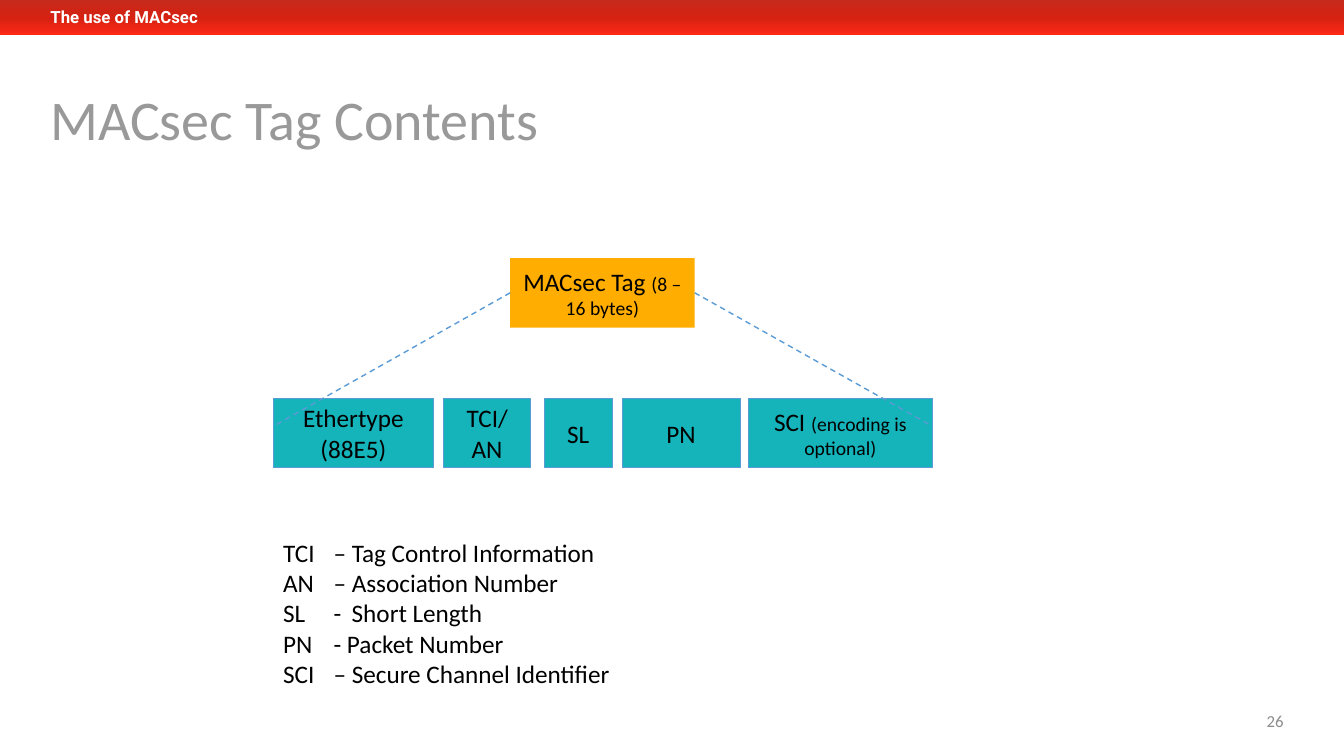
from copy import deepcopy
from lxml import etree
from pptx import Presentation
from pptx.dml.color import RGBColor
from pptx.enum import dml, shapes, text
from pptx.oxml import ns
from pptx.util import Inches, Pt

# Content
HEAD = "The use of MACsec"
TITLE = "MACsec Tag Contents"
PAGE = "26"
TAG = [("MACsec Tag ", 18), ("(8 – 16 bytes)", 14)]
FIELDS = [  # left, width, runs
    (2.71, 1.59, [("Ethertype (88E5)", 18)]),
    (4.4, 0.86, [("TCI/AN", 18)]),
    (5.4, 0.67, [("SL", 18)]),
    (6.17, 1.17, [("PN", 18)]),
    (7.42, 1.83, [("SCI ", 18), ("(encoding is optional)", 14)]),
]
TERMS = [
    ("TCI", "– Tag Control Information"),
    ("AN", "– Association Number"),
    ("SL", "-\tShort Length"),
    ("PN", "- Packet Number"),
    ("SCI", "– Secure Channel Identifier"),
]
STOPS = [(0, "C52A1D"), (0.5, "D52212"), (1, "FD2815")]
TABS = [0.5, 0.68]
BLUE, TEAL, AMBER = "5B9BD5", "15B4BA", "FFAD01"
TOP, HIGH = 3.95, 0.69

deck = Presentation()
deck.slide_width, deck.slide_height = Inches(13.33), Inches(7.5)
slide = deck.slides.add_slide(deck.slide_layouts[6])


def paint(color, hue):
    color.rgb = RGBColor.from_string(hue)


def write(para, runs, hue="000000", font="Calibri", bold=False):
    for words, size in runs:
        run = para.add_run()
        run.text = words
        run.font.name, run.font.size, run.font.bold = font, Pt(size), bold
        paint(run.font.color, hue)


def label(box, pads=(0.1, 0.05, 0.1, 0.05), mid=True):
    """Add a text box and return its frame."""
    frame = slide.shapes.add_textbox(*map(Inches, box)).text_frame
    frame.word_wrap = True
    (frame.margin_left, frame.margin_top,
     frame.margin_right, frame.margin_bottom) = map(Inches, pads)
    anchor = text.MSO_ANCHOR
    frame.vertical_anchor = anchor.MIDDLE if mid else anchor.TOP
    return frame


def block(box):
    shape = slide.shapes.add_shape(
        shapes.MSO_SHAPE.RECTANGLE, *map(Inches, box))
    shape.shadow.inherit = False
    shape.line.fill.background()
    return shape


def cell(box, runs, hue, edge=None):
    shape = block(box)
    shape.fill.solid()
    paint(shape.fill.fore_color, hue)
    if edge:
        paint(shape.line.color, edge)
        shape.line.width = Pt(0.5)
    frame = shape.text_frame
    frame.word_wrap = True
    frame.vertical_anchor = text.MSO_ANCHOR.MIDDLE
    para = frame.paragraphs[0]
    para.alignment = text.PP_ALIGN.CENTER
    write(para, runs)
    return shape


# Red band with a three-stop gradient
band = block((0, -0.01, 13.34, 0.36))
band.fill.gradient()
band.fill.gradient_angle = 270
first = band.fill.gradient_stops
stops = band.fill._fill._gradFill.gsLst
stops.insert(1, deepcopy(stops[0]))
for stop, (pos, hue) in zip(band.fill.gradient_stops, STOPS):
    stop.position = pos
    paint(stop.color, hue)

# Title, page number
para = label((0.5, 0.91, 9.73, 0.61), (0, 0, 0, 0)).paragraphs[0]
para.line_spacing = 0.9
write(para, [(TITLE, 40)], "999999")
para = label((9.83, 6.95, 3, 0.4)).paragraphs[0]
para.alignment = text.PP_ALIGN.RIGHT
write(para, [(PAGE, 12)], "8C8C8C")

# Tag and its fields
tag = cell((5.06, 2.56, 1.83, HIGH), TAG, AMBER)
for left, wide, runs in FIELDS:
    cell((left, TOP, wide, HIGH), runs, TEAL, BLUE)

# Dashed lines from the tag to the outer ends of the row
ends = [(1, FIELDS[0][0]), (3, FIELDS[-1][0] + FIELDS[-1][1])]
for side, x in ends:
    line = slide.shapes.add_connector(
        shapes.MSO_CONNECTOR.STRAIGHT, 0, 0, Inches(x), Inches(4.23))
    line.begin_connect(tag, side)
    paint(line.line.color, BLUE)
    line.line.width = Pt(1)
    line.line.dash_style = dml.MSO_LINE.DASH
    etree.SubElement(line._element.spPr, ns.qn("a:effectLst"))

# Glossary
frame = label((2.71, 5.28, 4.39, 2.04), mid=False)
for i, (term, sense) in enumerate(TERMS):
    para = frame.add_paragraph() if i else frame.paragraphs[0]
    tabs = etree.SubElement(para._p.get_or_add_pPr(), ns.qn("a:tabLst"))
    for at in TABS:
        etree.SubElement(tabs, ns.qn("a:tab"), pos=str(Inches(at)), algn="l")
    write(para, [(f"{term}\t{sense}", 18)])

# Heading on the band
frame = label((0.5, 0.02, 3.92, 0.3), (0, 0.05, 0.1, 0.05), mid=False)
write(frame.paragraphs[0], [(HEAD, 12)], "FFFFFF", "Roboto", True)

deck.save("out.pptx")
